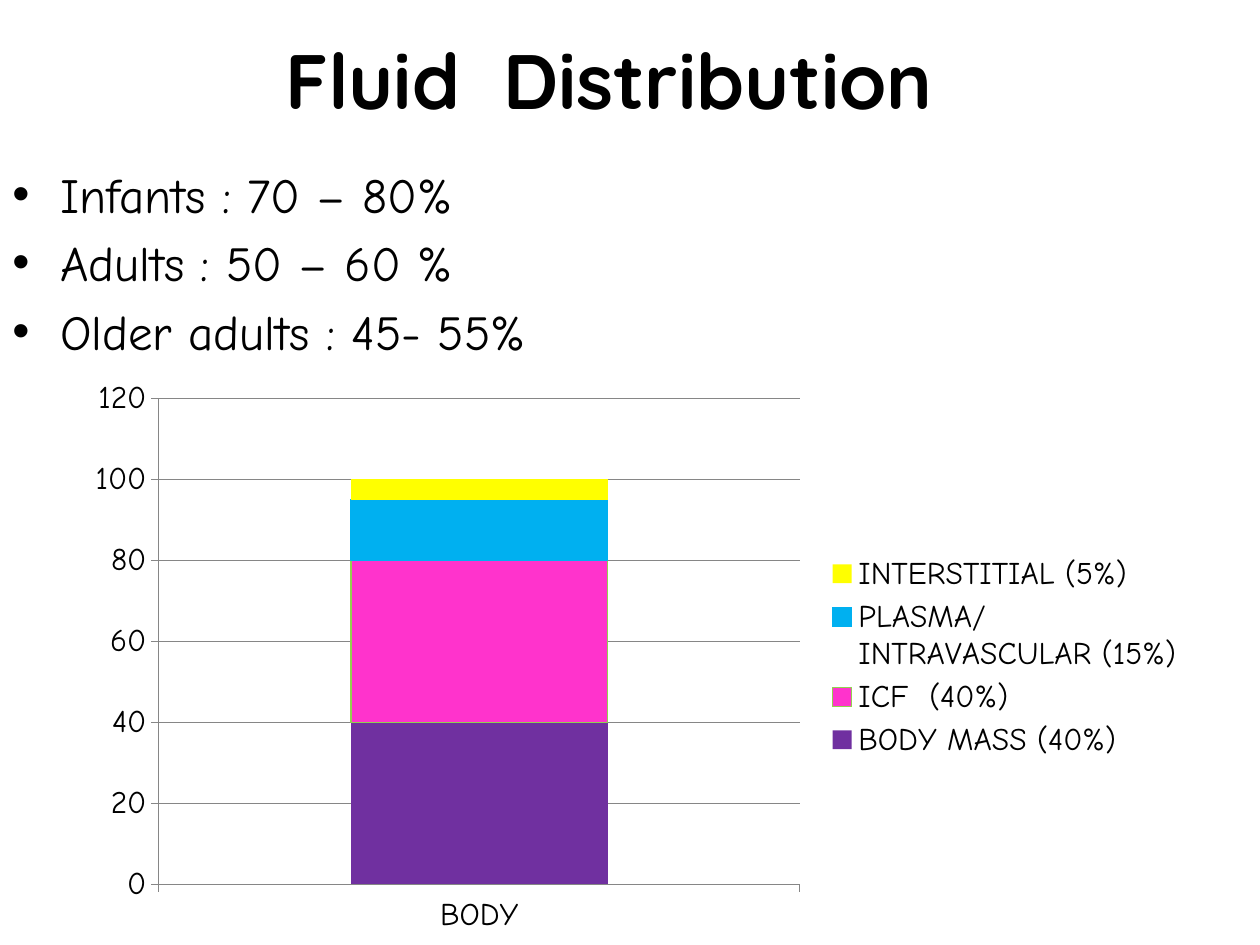
from dataclasses import dataclass

from lxml.etree import SubElement
from pptx import Presentation
from pptx.chart.data import CategoryChartData
from pptx.dml.color import RGBColor
from pptx.enum.chart import XL_CHART_TYPE as ChartType, XL_LEGEND_POSITION as LegendPosition
from pptx.enum.chart import XL_TICK_MARK as TickMark
from pptx.enum.text import MSO_ANCHOR as Anchor, PP_ALIGN as Align
from pptx.oxml.ns import qn
from pptx.util import Inches, Pt


@dataclass(frozen=True)
class Theme:
    """Colours, fonts and type sizes of the slide."""
    text: str = "000000"
    axis: str = "868686"
    title_font: str = "Quicksand"
    body_font: str = "Comic Neue"
    title_size: int = 44
    body_size: int = 28
    chart_size: int = 18


THEME = Theme()
WIDTH, HEIGHT = 10, 7.5
WATER_SHARES = ["Infants : 70 – 80%", "Adults : 50 – 60 %", "Older adults : 45- 55%"]
COMPARTMENTS = [
    ("BODY MASS (40%)", 40, "7030A0", None),
    ("ICF  (40%)", 40, "FF33CC", "92D050"),
    ("PLASMA/INTRAVASCULAR (15%)", 15, "00B0F0", "00B0F0"),
    ("INTERSTITIAL (5%)", 5, "FFFF00", None),
]


def box(left, top, width, height):
    """Turn shares of the slide's size into lengths."""
    return (Inches(WIDTH * left), Inches(HEIGHT * top),
            Inches(WIDTH * width), Inches(HEIGHT * height))


def set_font(font, name, size, bold=False):
    """Format a font in the text colour."""
    font.name, font.size, font.bold = name, Pt(size), bold
    font.color.rgb = RGBColor.from_string(THEME.text)


def add_title(slide, text, place):
    """Move, fill and format the title placeholder."""
    title = slide.shapes.title
    title.left, title.top, title.width, title.height = place
    title.text_frame.text = text
    title.text_frame.vertical_anchor = Anchor.MIDDLE
    paragraph = title.text_frame.paragraphs[0]
    paragraph.alignment = Align.CENTER
    set_font(paragraph.font, THEME.title_font, THEME.title_size, bold=True)


def add_bullets(slide, lines, place):
    """Add a bulleted list with a hanging indent."""
    frame = slide.shapes.add_textbox(*place).text_frame
    frame.word_wrap = True
    frame.text = "\n".join(lines)
    indent = Inches(0.38)
    for paragraph in frame.paragraphs:
        set_font(paragraph.font, THEME.body_font, THEME.body_size)
        properties = paragraph._p.get_or_add_pPr()
        properties.set("marL", str(indent))
        properties.set("indent", str(-indent))
        paragraph.space_before = Pt(THEME.body_size * 0.2)
        bullet_font = SubElement(properties, qn("a:buFont"))
        bullet_font.set("typeface", "Arial")
        SubElement(properties, qn("a:buChar")).set("char", "•")
        properties.append(properties.find(qn("a:defRPr")))


def format_axis(axis, gridlines):
    """Set the ticks, lines and gridlines of an axis."""
    axis.major_tick_mark = TickMark.OUTSIDE
    axis.has_major_gridlines = gridlines
    formats = [axis.format]
    if gridlines:
        formats.append(axis.major_gridlines.format)
    for item in formats:
        item.line.color.rgb = RGBColor.from_string(THEME.axis)
        item.line.width = Pt(0.75)


def add_stacked_chart(slide, category, parts, place):
    """Add a stacked column with a legend on the right."""
    data = CategoryChartData()
    data.categories = [category]
    for name, value, _, _ in parts:
        data.add_series(name, [value])
    chart = slide.shapes.add_chart(ChartType.COLUMN_STACKED, *place, data).chart
    set_font(chart.font, THEME.body_font, THEME.chart_size)
    chart.has_title = False
    chart.has_legend = True
    chart.legend.position = LegendPosition.RIGHT
    chart.legend.include_in_layout = False
    format_axis(chart.category_axis, gridlines=False)
    format_axis(chart.value_axis, gridlines=True)
    plot = chart.plots[0]
    plot.overlap, plot.gap_width, plot.vary_by_categories = 100, 150, False
    for series, (_, _, fill, line) in zip(plot.series, parts):
        series.format.fill.solid()
        series.format.fill.fore_color.rgb = RGBColor.from_string(fill)
        if line:
            series.format.line.color.rgb = RGBColor.from_string(line)
            series.format.line.width = Pt(0.75)


def main():
    """Build and save the slide."""
    presentation = Presentation()
    presentation.slide_width, presentation.slide_height = Inches(WIDTH), Inches(HEIGHT)
    slide = presentation.slides.add_slide(presentation.slide_layouts[5])
    add_title(slide, "Fluid  Distribution ", box(0.042, 0, 0.9, 0.167))
    add_bullets(slide, WATER_SHARES, box(0, 0.167, 0.492, 0.277))
    add_stacked_chart(slide, "BODY", COMPARTMENTS, box(0.058, 0.39, 0.892, 0.61))
    presentation.save("out.pptx")


if __name__ == "__main__":
    main()
